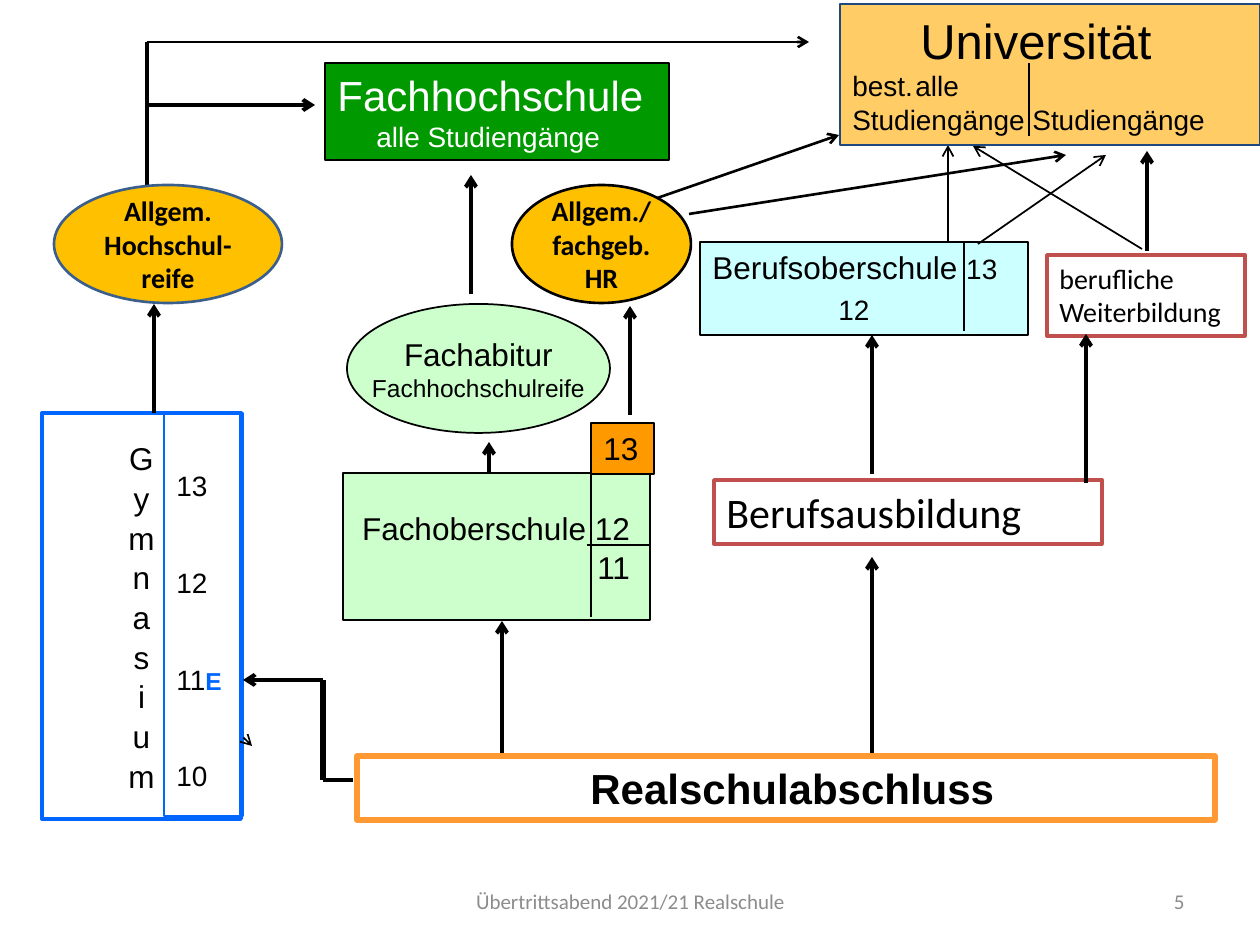
from dataclasses import dataclass

from lxml.etree import SubElement
from pptx import Presentation
from pptx.dml.color import RGBColor
from pptx.enum.shapes import MSO_CONNECTOR as CONN, MSO_SHAPE as SHAPE
from pptx.enum.text import MSO_ANCHOR as ANCHOR, PP_ALIGN as ALIGN
from pptx.oxml.ns import qn
from pptx.util import Pt

PX = 914400 / 126


@dataclass(frozen=True)
class Theme:
    """Colours, fonts and type sizes of the slide."""
    black: str = "000000"
    white: str = "FFFFFF"
    blue: str = "0066FF"
    navy: str = "1F497D"
    steel: str = "3A5F8C"
    red: str = "C0504D"
    orange: str = "FF9933"
    amber: str = "FF9900"
    gold: str = "FFC000"
    sand: str = "FFCC66"
    mint: str = "CCFFCC"
    cyan: str = "CCFFFF"
    green: str = "009900"
    grey: str = "8C8C8C"
    sans: str = "Arial"
    body: str = "Calibri"
    title: int = 28
    head: int = 24
    name: int = 18
    text: int = 16
    small: int = 14
    foot: int = 12


T = Theme()


def emu(px):
    """Turn px into EMU."""
    return round(px * PX)


def place(box, rect):
    """Return a rectangle, given relative to a box, in EMU."""
    x, y, w, h = rect
    return emu(box[0] + x), emu(box[1] + y), emu(w), emu(h)


def write(sp, text, size=T.text, font=T.sans, color=T.black, bold=False,
          align=ALIGN.LEFT, indent=0, before=0, spacing=None, tab=None):
    """Append a paragraph for each line of text to a shape."""
    tf = sp.text_frame
    for line in text.split("\n"):
        fresh = len(tf.paragraphs) == 1 and not tf.paragraphs[0].runs
        p = tf.paragraphs[0] if fresh else tf.add_paragraph()
        p.alignment = align
        p.space_before = Pt(0 if fresh else before)
        if spacing:
            p.line_spacing = spacing
        pPr = p._p.get_or_add_pPr()
        pPr.set("marL", str(emu(indent)))
        pPr.set("indent", "0")
        if tab:
            stops = SubElement(pPr, qn("a:tabLst"))
            SubElement(stops, qn("a:tab"), pos=str(emu(tab)), algn="l")
        add_run(p, line, size, font, color, bold)


def add_run(p, text, size, font, color, bold=False):
    """Append a formatted run to a paragraph."""
    r = p.add_run()
    r.text = text
    r.font.size, r.font.name, r.font.bold = Pt(size), font, bold
    r.font.color.rgb = RGBColor.from_string(color)


def add_box(s, box, rect, fill, line, width=1, kind=SHAPE.RECTANGLE,
            anchor=ANCHOR.TOP, wrap=True):
    """Draw an outlined shape ready for text."""
    sp = s.shapes.add_shape(kind, *place(box, rect))
    sp.shadow.inherit = False
    if fill:
        sp.fill.solid()
        sp.fill.fore_color.rgb = RGBColor.from_string(fill)
    else:
        sp.fill.background()
    sp.line.color.rgb = RGBColor.from_string(line)
    sp.line.width = Pt(width)
    sp.text_frame.word_wrap = wrap
    sp.text_frame.vertical_anchor = anchor
    return sp


def add_line(s, box, x1, y1, x2, y2, width=2.25, arrow=True):
    """Draw a black line or arrow relative to a box."""
    x, y = box[:2]
    c = s.shapes.add_connector(CONN.STRAIGHT, emu(x + x1), emu(y + y1),
                               emu(x + x2), emu(y + y2))
    c.line.color.rgb = RGBColor.from_string(T.black)
    c.line.width = Pt(width)
    if arrow:
        SubElement(c.line._get_or_add_ln(), qn("a:tailEnd"), type="arrow")
    SubElement(c._element.spPr, qn("a:effectLst"))


def gymnasium(s, box):
    """Place the Gymnasium with its grades and the Hochschulreife."""
    sp = add_box(s, box, (2, 373, 199, 406), T.white, T.blue, 2.25,
                 anchor=ANCHOR.MIDDLE, wrap=False)
    write(sp, "\n".join("Gymnasium"), size=T.name, align=ALIGN.CENTER, spacing=1.05)
    grades = add_box(s, box, (124, 373, 79, 403), None, T.blue)
    grades.text_frame.margin_top = emu(56)
    write(grades, "13\n12\n11\n10", before=36)
    add_run(grades.text_frame.paragraphs[2], "E", T.small, T.sans, T.blue, True)
    add_line(s, box, 107, 159, 107, 2, arrow=False)
    add_line(s, box, 107, 2, 769, 2, 1.5)
    add_line(s, box, 107, 65, 275, 65)
    add_line(s, box, 114, 373, 114, 264)
    add_line(s, box, 205, 699, 212, 706, 1)
    sp = add_box(s, box, (14, 145, 228, 118), T.gold, T.steel, 1.5,
                 SHAPE.OVAL, ANCHOR.MIDDLE)
    write(sp, "Allgem.\nHochschul- reife", font=T.body, bold=True, align=ALIGN.CENTER)


def fachoberschule(s, box):
    """Place the way from Fachoberschule to Fachhochschule."""
    sp = add_box(s, box, (23, 413, 307, 147), T.mint, T.black, anchor=ANCHOR.MIDDLE)
    sp.text_frame.margin_right = emu(20)
    write(sp, "Fachoberschule 12\n11", size=T.name, align=ALIGN.RIGHT, spacing=1.05)
    add_line(s, box, 271, 413, 271, 557, 1, arrow=False)
    add_line(s, box, 267, 485, 330, 485, 1, arrow=False)
    sp = add_box(s, box, (271, 363, 63, 51), T.amber, T.black)
    write(sp, "13", size=T.name)
    sp = add_box(s, box, (27, 244, 263, 129), T.mint, T.black, 1,
                 SHAPE.OVAL, ANCHOR.MIDDLE, False)
    write(sp, "Fachabitur", size=T.name, align=ALIGN.CENTER)
    write(sp, "Fachhochschulreife", size=T.small, align=ALIGN.CENTER)
    sp = add_box(s, box, (5, 3, 344, 97), T.green, T.black)
    write(sp, "Fachhochschule", size=T.head, color=T.white)
    write(sp, "alle Studiengänge", color=T.white, indent=39)
    add_line(s, box, 320, 144, 519, 75, 1.5)
    add_line(s, box, 369, 154, 746, 95, 1.5)
    for x, y1, y2 in ((310, 355, 246), (151, 234, 115), (169, 413, 382)):
        add_line(s, box, x, y1, x, y2)
    sp = add_box(s, box, (192, 125, 179, 118), T.gold, T.black, 1.5,
                 SHAPE.OVAL, ANCHOR.MIDDLE)
    write(sp, "Allgem./fachgeb. HR", font=T.body, bold=True, align=ALIGN.CENTER)


def berufsausbildung(s, box):
    """Place the Berufsausbildung and the ways that follow it."""
    sp = add_box(s, box, (14, 340, 388, 64), T.white, T.red, 2)
    write(sp, "Berufsausbildung", size=T.head, font=T.body)
    sp = add_box(s, box, (0, 102, 328, 93), T.cyan, T.black)
    write(sp, "Berufsoberschule ", size=T.name)
    add_run(sp.text_frame.paragraphs[0], "13", T.text, T.sans, T.black)
    write(sp, "12", indent=126, before=4)
    add_line(s, box, 264, 102, 264, 191, 1, arrow=False)
    sp = add_box(s, box, (347, 115, 198, 81), T.white, T.red, 2)
    write(sp, "berufliche Weiterbildung", font=T.body)
    for x, y1, y2 in ((172, 334, 195), (386, 343, 194), (447, 111, 11)):
        add_line(s, box, x, y1, x, y2)
    for ends in ((248, 102, 248, 5), (278, 104, 406, 15), (442, 109, 273, 6)):
        add_line(s, box, *ends, 1)


def universitaet(s, box):
    """Place the Universität with its two kinds of access."""
    sp = add_box(s, box, (0, 0, *box[2:]), T.sand, T.navy)
    write(sp, "Universität", size=T.title, indent=68)
    write(sp, "best.\talle", tab=199)
    write(sp, "Studiengänge Studiengänge")
    add_line(s, box, 189, 59, 189, 132, 1, arrow=False)


def realschulabschluss(s, box):
    """Place the Realschulabschluss and the ways out of it."""
    add_line(s, box, 113, 230, 83, 230, arrow=False)
    add_line(s, box, 83, 230, 83, 130, 3, arrow=False)
    add_line(s, box, 83, 130, 3, 130)
    add_line(s, box, 262, 205, 262, 71)
    add_line(s, box, 632, 206, 632, 7)
    sp = add_box(s, box, (117, 206, 858, 64), T.white, T.orange, 3)
    write(sp, "Realschulabschluss", size=T.head, bold=True, indent=221)


def footer(s, box):
    """Place the event name and the slide number."""
    for text, rect, align in (
            ("Übertrittsabend 2021/21 Realschule", (0, 0, 399, 50), ALIGN.CENTER),
            ("5", (472, 0, 294, 50), ALIGN.RIGHT)):
        sp = s.shapes.add_textbox(*place(box, rect))
        sp.text_frame.word_wrap = True
        sp.text_frame.vertical_anchor = ANCHOR.MIDDLE
        write(sp, text, size=T.foot, font=T.body, color=T.grey, align=align)


def main():
    """Build and save the slide."""
    prs = Presentation()
    prs.slide_width, prs.slide_height = emu(1260), emu(945)
    s = prs.slides.add_slide(prs.slide_layouts[6])
    gymnasium(s, (40, 40, 770, 780))
    fachoberschule(s, (320, 60, 750, 560))
    berufsausbildung(s, (700, 140, 545, 404))
    universitaet(s, (840, 4, 420, 141))
    realschulabschluss(s, (240, 550, 975, 270))
    footer(s, (431, 876, 766, 50))
    prs.save("out.pptx")


if __name__ == "__main__":
    main()
